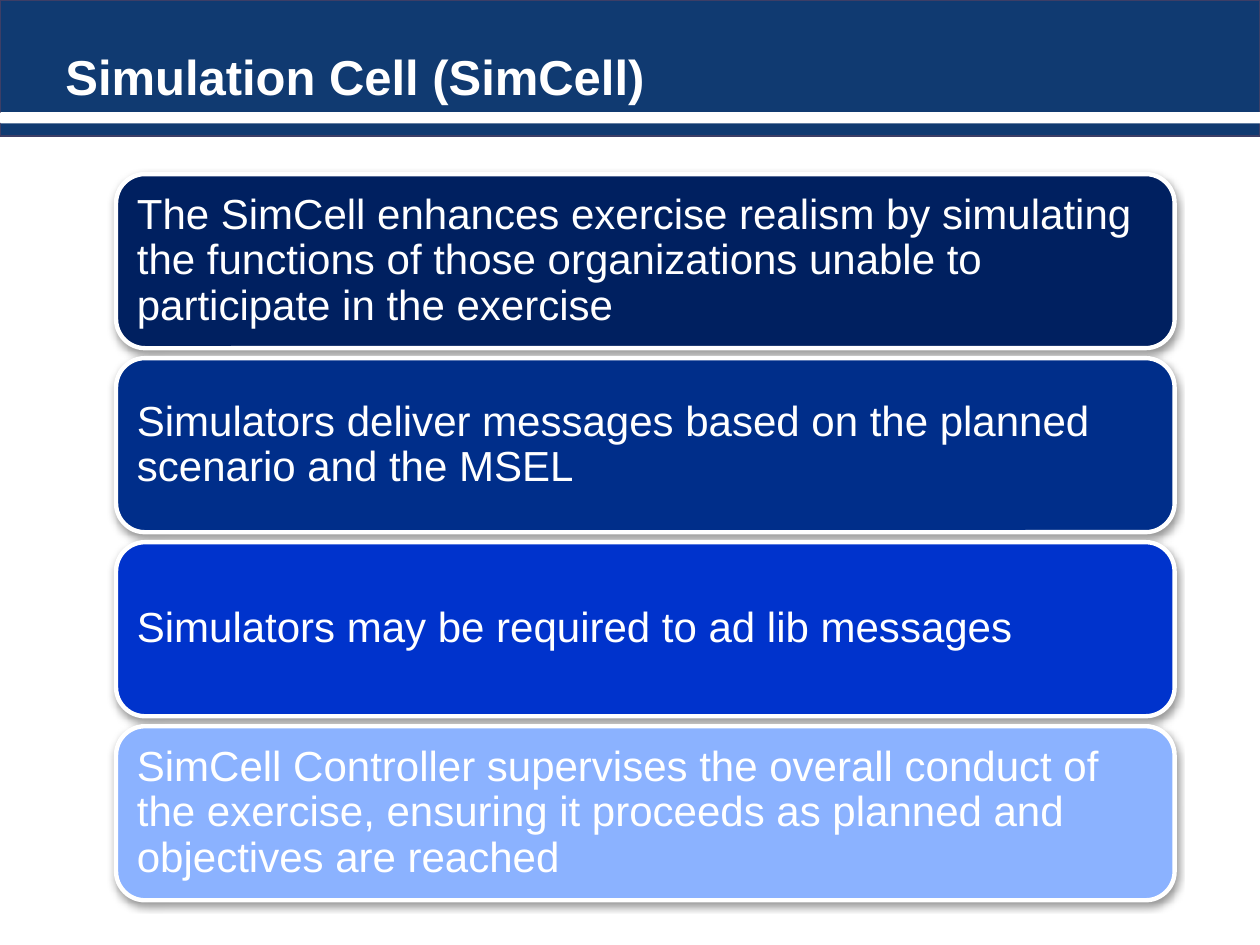
from lxml.etree import SubElement
from pptx import Presentation
from pptx.dml.color import RGBColor
from pptx.enum.shapes import MSO_SHAPE
from pptx.enum.text import MSO_ANCHOR, PP_ALIGN
from pptx.oxml.ns import qn
from pptx.util import Cm, Pt


def color(code):
    return RGBColor.from_string(code)


def write(frame, text, size=24, bold=False, anchor=MSO_ANCHOR.MIDDLE,
          inset=0.25, space=1.0, font="Arial", ink="FFFFFF"):
    frame.word_wrap = True
    frame.vertical_anchor = anchor
    frame.margin_left = frame.margin_right = Cm(0.25)
    frame.margin_top = frame.margin_bottom = Cm(inset)
    para = frame.paragraphs[0]
    para.alignment = PP_ALIGN.LEFT
    para.line_spacing = space
    run = para.add_run()
    run.text = text
    run.font.name = font
    run.font.size = Pt(size)
    run.font.bold = bold
    run.font.color.rgb = color(ink)


class Deck:
    """Holds the slide and the shared style of its elements."""

    white = "FFFFFF"
    navy = "103A71"

    def __init__(self):
        self.file = Presentation()
        self.file.slide_width, self.file.slide_height = Cm(25.4), Cm(19.05)
        self.slide = self.file.slides.add_slide(self.file.slide_layouts[6])

    def shape(self, kind, area, fill, line=None, width=1):
        item = self.slide.shapes.add_shape(kind, *map(Cm, area))
        item.shadow.inherit = False
        item.fill.solid()
        item.fill.fore_color.rgb = color(fill)
        if line:
            item.line.color.rgb = color(line)
            item.line.width = Pt(width)
        else:
            item.line.fill.background()
        return item

    def title(self, area, text):
        box = self.slide.shapes.add_textbox(*map(Cm, area))
        write(box.text_frame, text, size=28, bold=True,
              anchor=MSO_ANCHOR.BOTTOM, inset=0.13)

    def card(self, area, text, fill):
        item = self.shape(MSO_SHAPE.ROUNDED_RECTANGLE, area, fill, self.white, 2.5)
        self.shade(item)
        write(item.text_frame, text, space=0.9)

    def shade(self, item):
        """Give the item a soft shadow straight below it."""
        effects = item._element.spPr.find(qn("a:effectLst"))
        outer = SubElement(effects, qn("a:outerShdw"), blurRad=str(Pt(4.1)),
                           dist=str(Pt(2)), dir="5400000", rotWithShape="0")
        black = SubElement(outer, qn("a:srgbClr"), val="000000")
        SubElement(black, qn("a:alpha"), val="40000")


def main():
    deck = Deck()
    deck.shape(MSO_SHAPE.RECTANGLE, (0, 0, 25.4, 2.74), deck.navy, "3D3E66", 1.5)
    deck.shape(MSO_SHAPE.ROUNDED_RECTANGLE, (0, 2.26, 25.6, 0.23), deck.white)
    deck.title((1.07, 0, 23.7, 2.26), "Simulation Cell (SimCell)")

    cards = [
        ("The SimCell enhances exercise realism by simulating the functions of "
         "those organizations unable to participate in the exercise", "002060"),
        ("Simulators deliver messages based on the planned scenario and the MSEL",
         "002E8A"),
        ("Simulators may be required to ad lib messages", "0033CC"),
        ("SimCell Controller supervises the overall conduct of the exercise, "
         "ensuring it proceeds as planned and objectives are reached", "8BB2FF"),
    ]
    top, high, gap = 3.51, 3.51, 0.2
    for row, (text, fill) in enumerate(cards):
        deck.card((2.34, top + row * (high + gap), 21.34, high), text, fill)
    deck.file.save("out.pptx")


if __name__ == "__main__":
    main()
